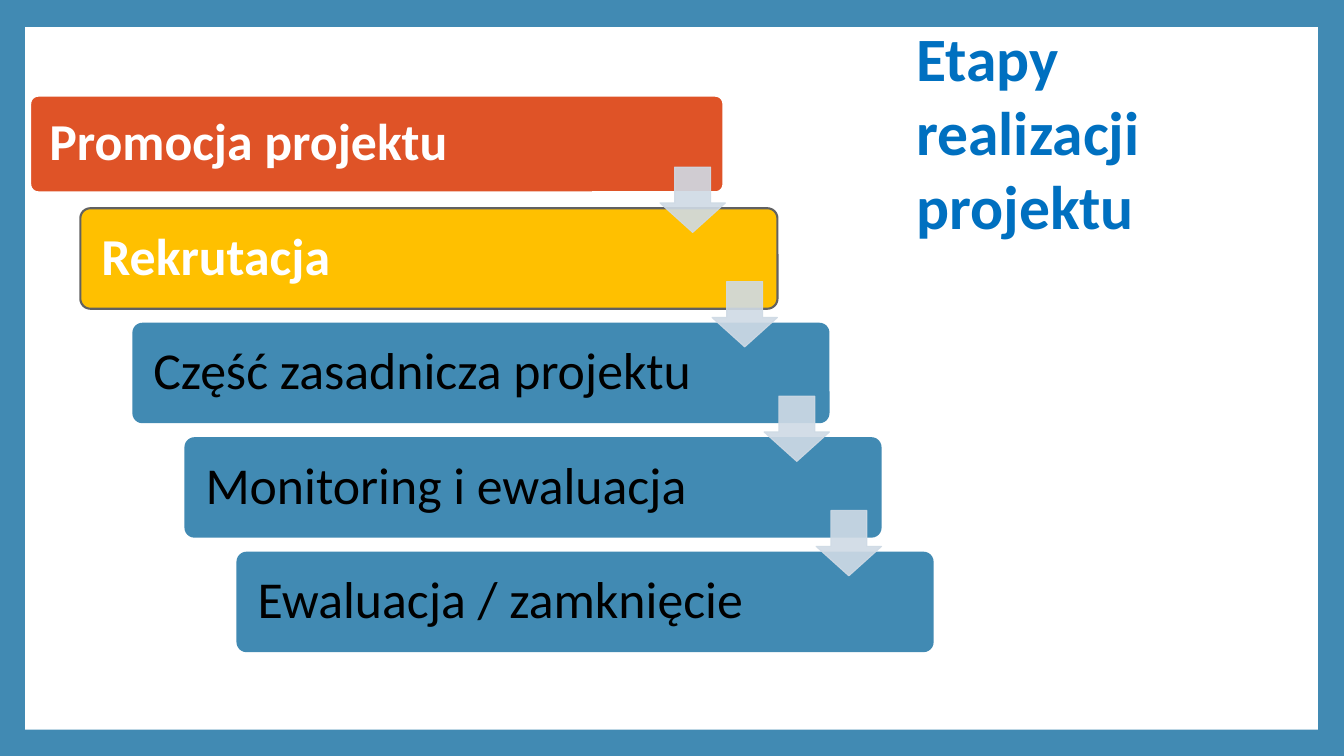
import dataclasses

import pptx
import pptx.dml.color
import pptx.enum.shapes
import pptx.enum.text
import pptx.oxml
import pptx.oxml.ns
import pptx.util

SHAPES = pptx.enum.shapes.MSO_SHAPE
INCH = pptx.util.Inches


@dataclasses.dataclass(frozen=True)
class Theme:
    font: str = "Calibri"
    title_size: float = 44
    stage_size: float = 37
    blue: str = "418AB3"
    title: str = "0070C0"
    orange: str = "DF5327"
    amber: str = "FFC000"
    grey: str = "616161"
    arrow: str = "CFDAE5"
    white: str = "FFFFFF"
    black: str = "000000"


THEME = Theme()
SLIDE = (13.33, 7.5)

# text, fill, text colour, bold, (line colour, line width)
STAGES = [
    ("Promocja projektu", THEME.orange, THEME.white, True, (THEME.white, 4.25)),
    ("Rekrutacja", THEME.amber, THEME.white, True, (THEME.grey, 1.5)),
    ("Część zasadnicza projektu", THEME.blue, THEME.black, False, None),
    ("Monitoring i ewaluacja", THEME.blue, THEME.black, False, None),
    ("Ewaluacja / zamknięcie", THEME.blue, THEME.black, False, None),
]


def rgb(value):
    return pptx.dml.color.RGBColor.from_string(value)


def add_box(page, kind, area, fill, line=None, adjustments=()):
    box = page.shapes.add_shape(kind, *map(INCH, area))
    box.shadow.inherit = False
    box.fill.solid()
    box.fill.fore_color.rgb = rgb(fill)
    if line:
        box.line.color.rgb = rgb(line[0])
        box.line.width = pptx.util.Pt(line[1])
    else:
        box.line.fill.background()
    for index, value in enumerate(adjustments):
        box.adjustments[index] = value
    return box


def write(box, text, *, size, color, bold=False, insets=(0.1, 0.05), wrap=True, spacing=None):
    frame = box.text_frame
    frame.word_wrap = wrap
    frame.vertical_anchor = pptx.enum.text.MSO_ANCHOR.MIDDLE
    frame.margin_left = frame.margin_right = INCH(insets[0])
    frame.margin_top = frame.margin_bottom = INCH(insets[1])
    frame.text = text
    for para in frame.paragraphs:
        para.alignment = pptx.enum.text.PP_ALIGN.LEFT
        para.line_spacing = spacing
        para.font.name = THEME.font
        para.font.size = pptx.util.Pt(size)
        para.font.bold = bold
        para.font.color.rgb = rgb(color)


def make_translucent(box, percent):
    for color in box._element.spPr.iter(pptx.oxml.ns.qn("a:srgbClr")):
        alpha = pptx.oxml.parse_xml(
            f'<a:alpha {pptx.oxml.ns.nsdecls("a")} val="{percent * 1000}"/>')
        color.append(alpha)


def draw_frame(page, area):
    page.background.fill.solid()
    page.background.fill.fore_color.rgb = rgb(THEME.blue)
    add_box(page, SHAPES.RECTANGLE, area, THEME.white)


def draw_staircase(page, area):
    """Place the stages as equal steps from top left to bottom right, linked by arrows."""
    left, top, width, height = area
    bar_width, bar_height = width * 0.77, height * 0.18
    steps = len(STAGES) - 1
    shift, drop = (width - bar_width) / steps, (height - bar_height) / steps
    for index, (text, fill, color, bold, line) in enumerate(STAGES):
        bar = add_box(page, SHAPES.ROUNDED_RECTANGLE,
                      (left + index * shift, top + index * drop, bar_width, bar_height),
                      fill, line, (0.1,))
        write(bar, text, size=THEME.stage_size, color=color, bold=bold,
              insets=(0.18, 0.15), spacing=0.9)

    side = bar_height * 0.65
    for index in range(steps):
        arrow = add_box(page, SHAPES.DOWN_ARROW,
                        (left + bar_width - side + index * shift,
                         top + bar_height * 0.73 + index * drop, side, side),
                        THEME.arrow, (THEME.arrow, 0.79), (0.55, 0.45))
        # python-pptx lists the head-width adjustment first for this preset
        make_translucent(arrow, 90)


def draw_title(page, area):
    box = page.shapes.add_textbox(*map(INCH, area))
    write(box, "Etapy realizacji\nprojektu", size=THEME.title_size,
          color=THEME.title, bold=True, wrap=False)


def main():
    deck = pptx.Presentation()
    deck.slide_width, deck.slide_height = map(INCH, SLIDE)
    page = deck.slides.add_slide(deck.slide_layouts[6])
    draw_frame(page, (0.25, 0.27, 12.82, 6.97))
    draw_staircase(page, (0.28, 0.93, 8.98, 5.54))
    draw_title(page, (8.99, 0.79, 3.33, 1.01))
    deck.save("out.pptx")


if __name__ == "__main__":
    main()
